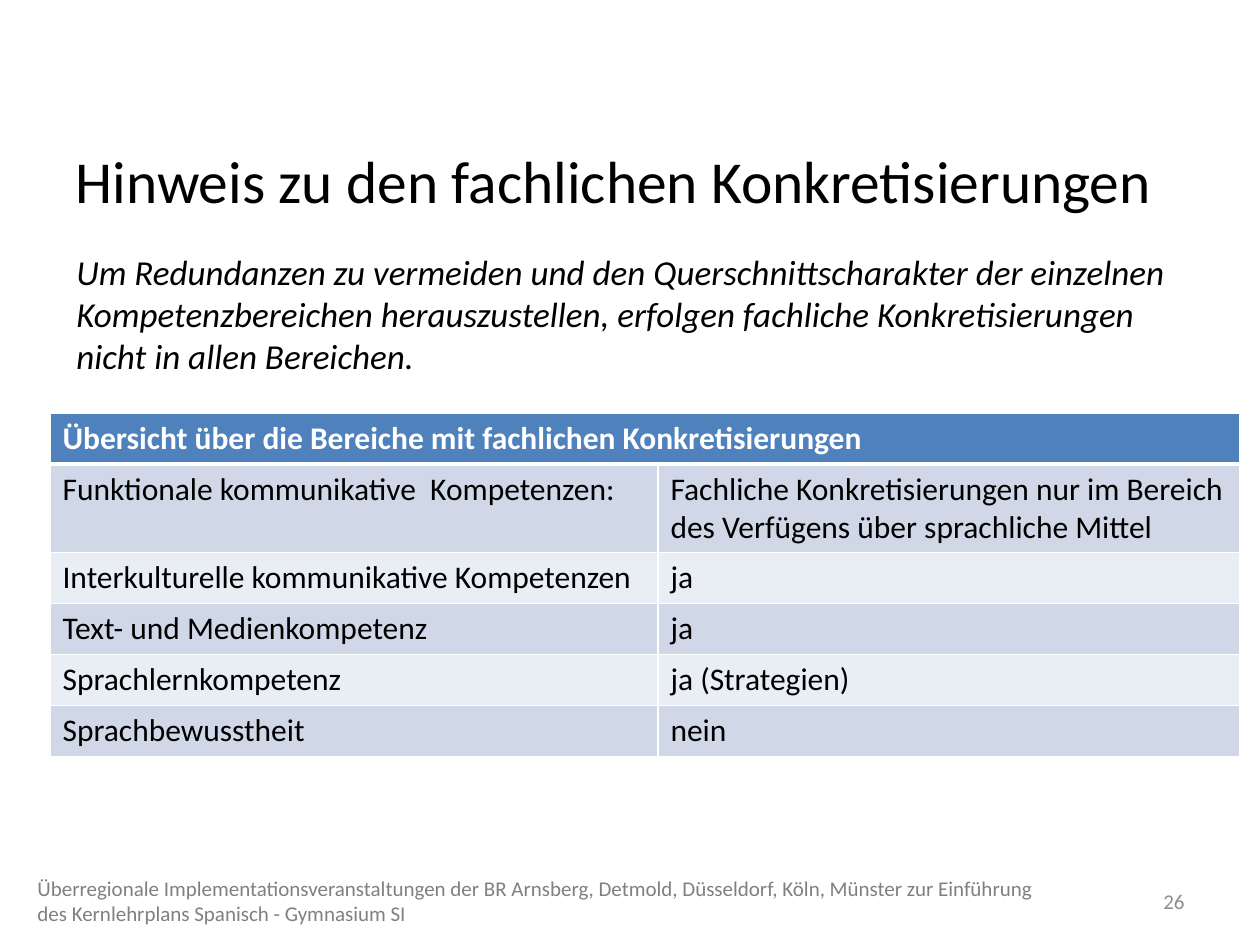
from dataclasses import dataclass

from lxml import etree
from pptx import Presentation
from pptx.dml.color import RGBColor
from pptx.enum.text import MSO_ANCHOR, PP_ALIGN
from pptx.oxml.ns import qn

LEFT, RIGHT = PP_ALIGN.LEFT, PP_ALIGN.RIGHT
TOP, MIDDLE = MSO_ANCHOR.TOP, MSO_ANCHOR.MIDDLE

TITLE = "Hinweis zu den fachlichen Konkretisierungen"
INTRO = (
    "Um Redundanzen zu vermeiden und den Querschnittscharakter der einzelnen "
    "Kompetenzbereichen herauszustellen, erfolgen fachliche Konkretisierungen "
    "nicht in allen Bereichen."
)
TABLE_HEADER = "Übersicht über die Bereiche mit fachlichen Konkretisierungen"
TABLE_ROWS = [
    ("Funktionale kommunikative  Kompetenzen:",
     "Fachliche Konkretisierungen nur im Bereich des Verfügens über sprachliche Mittel"),
    ("Interkulturelle kommunikative Kompetenzen", "ja"),
    ("Text- und Medienkompetenz", "ja"),
    ("Sprachlernkompetenz", "ja (Strategien)"),
    ("Sprachbewusstheit", "nein"),
]
FOOTER = (
    "Überregionale Implementationsveranstaltungen der BR Arnsberg, Detmold, "
    "Düsseldorf, Köln, Münster zur Einführung des Kernlehrplans Spanisch - Gymnasium SI"
)
PAGE_NUMBER = "26"

# left, top, width, height in px
SLIDE_SIZE = (1260, 945)
TITLE_BOX = (63, 155, 1134, 49)
INTRO_BOX = (64, 244, 1160, 140)
FOOTER_BOX = (25, 876, 1042, 50)
NUMBER_BOX = (1116, 876, 81, 50)
TABLE_LEFT, TABLE_TOP, ROW_HEIGHT = 50, 413, 51
COLUMN_WIDTHS = (608, 582)


@dataclass(frozen=True)
class Theme:
    font: str = "Calibri"
    text: str = "000000"
    white: str = "FFFFFF"
    footer: str = "808080"
    number: str = "8C8C8C"
    header_fill: str = "4F81BD"
    bands: tuple = ("D0D8E8", "E9EDF4")
    title_size: int = 34
    intro_size: int = 20
    table_size: int = 18
    footer_size: int = 12
    line: int = 1
    header_line: int = 3


THEME = Theme()


def px(value):
    return round(value * 914400 / 126)


def write(tf, text, size, color=THEME.text, bold=False, italic=False,
          align=LEFT, anchor=TOP):
    tf.word_wrap = True
    tf.vertical_anchor = anchor
    p = tf.paragraphs[0]
    p.alignment = align
    r = p.add_run()
    r.text = text
    font = r.font
    font.name, font.size = THEME.font, px(size * 126 / 72)
    font.bold, font.italic = bold, italic
    font.color.rgb = RGBColor.from_string(color)


def place(shape, box):
    shape.left, shape.top, shape.width, shape.height = map(px, box)


def add_text(s, box, text, **fmt):
    write(s.shapes.add_textbox(*map(px, box)).text_frame, text, **fmt)


def set_borders(cell, top, bottom):
    """Draw white cell borders; widths are in points."""
    widths = {"lnL": THEME.line, "lnR": THEME.line, "lnT": top, "lnB": bottom}
    tcPr = cell._tc.get_or_add_tcPr()
    for i, (tag, width) in enumerate(widths.items()):
        ln = etree.Element(qn("a:" + tag), w=str(width * 12700))
        fill = etree.SubElement(ln, qn("a:solidFill"))
        etree.SubElement(fill, qn("a:srgbClr"), val=THEME.white)
        tcPr.insert(i, ln)


def add_overview(s):
    rows = [(TABLE_HEADER, "")] + TABLE_ROWS
    frame = s.shapes.add_table(
        len(rows), len(COLUMN_WIDTHS), px(TABLE_LEFT), px(TABLE_TOP),
        px(sum(COLUMN_WIDTHS)), px(ROW_HEIGHT * len(rows)))
    table = frame.table
    for column, width in zip(table.columns, COLUMN_WIDTHS):
        column.width = px(width)
    table.cell(0, 0).merge(table.cell(0, 1))
    for i, row in enumerate(rows):
        table.rows[i].height = px(ROW_HEIGHT)
        header = i == 0
        fill = THEME.header_fill if header else THEME.bands[(i - 1) % 2]
        for j, text in enumerate(row):
            cell = table.cell(i, j)
            cell.fill.solid()
            cell.fill.fore_color.rgb = RGBColor.from_string(fill)
            set_borders(cell,
                        top=THEME.header_line if i == 1 else THEME.line,
                        bottom=THEME.header_line if header else THEME.line)
            if text:
                write(cell.text_frame, text, THEME.table_size, bold=header,
                      color=THEME.white if header else THEME.text)


def main():
    prs = Presentation()
    prs.slide_width, prs.slide_height = map(px, SLIDE_SIZE)
    s = prs.slides.add_slide(prs.slide_layouts[5])

    title = s.shapes.title
    place(title, TITLE_BOX)
    write(title.text_frame, TITLE, THEME.title_size, anchor=MIDDLE)

    add_text(s, NUMBER_BOX, PAGE_NUMBER, size=THEME.footer_size,
             color=THEME.number, align=RIGHT, anchor=MIDDLE)
    add_text(s, INTRO_BOX, INTRO, size=THEME.intro_size, italic=True)
    add_overview(s)
    add_text(s, FOOTER_BOX, FOOTER, size=THEME.footer_size,
             color=THEME.footer, anchor=MIDDLE)
    prs.save("out.pptx")


if __name__ == "__main__":
    main()
